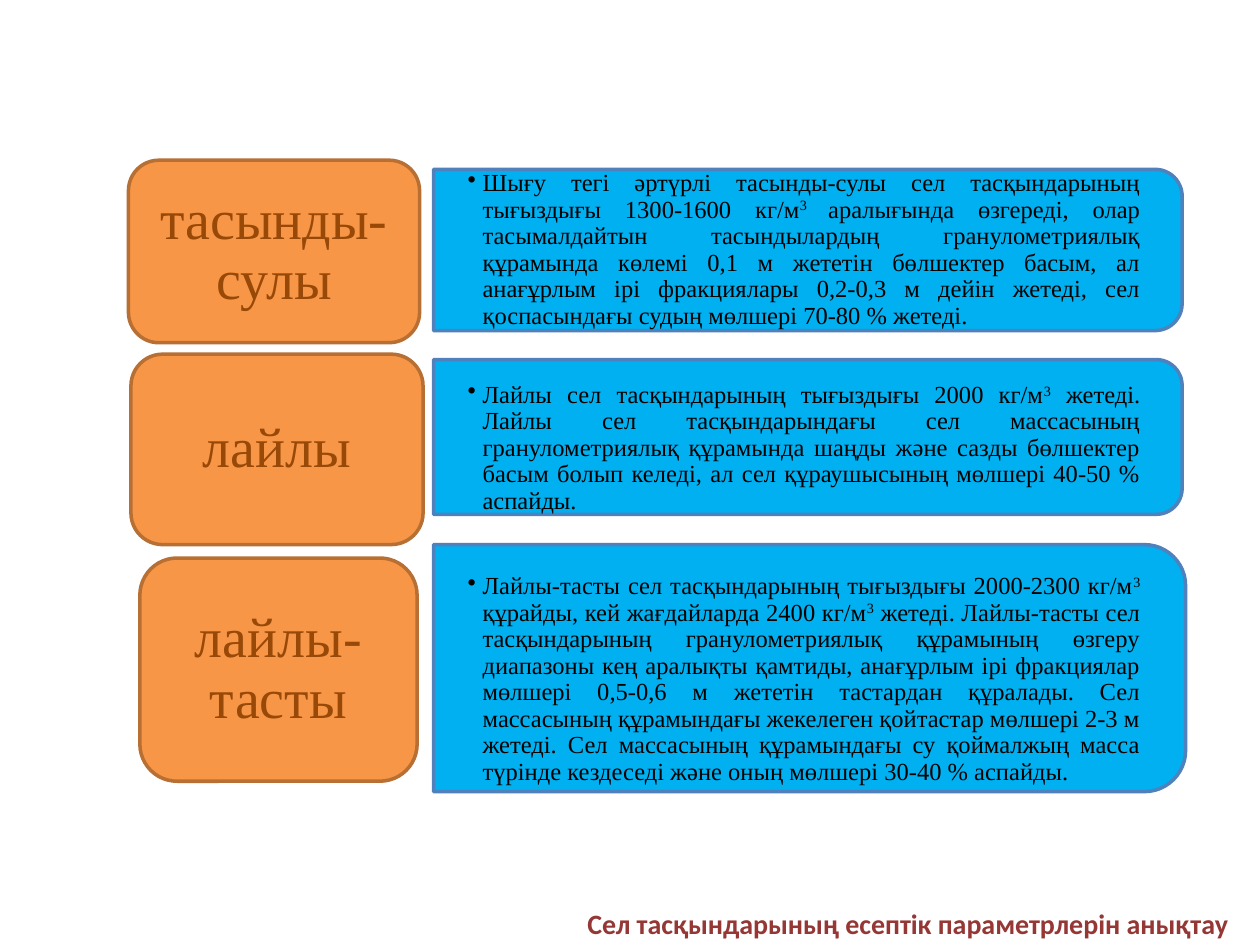
from lxml.etree import SubElement
from pptx import Presentation
from pptx.dml.color import RGBColor
from pptx.enum.shapes import MSO_SHAPE as Preset
from pptx.enum.text import MSO_ANCHOR as Anchor, PP_ALIGN as Align
from pptx.oxml.ns import qn
from pptx.util import Cm, Pt

TITLE = "Сел тасқындарының есептік параметрлерін анықтау"
TITLE_AREA = (11.1, 18.14, 13.67, 0.94)

FLOWS = [
    {
        "name": "тасынды-сулы",
        "label": (2.59, 3.23, 5.87, 3.68),
        "panel": (5.04, 15.09, 3.25),
        "drop": 0,
        "detail": "Шығу тегі әртүрлі тасынды-сулы сел тасқындарының тығыздығы "
                  "1300-1600 кг/м|3 |аралығында өзгереді, олар тасымалдайтын "
                  "тасындылардың гранулометриялық құрамында көлемі 0,1 м жететін "
                  "бөлшектер басым, ал анағұрлым ірі фракциялары 0,2-0,3 м дейін "
                  "жетеді, сел қоспасындағы судың мөлшері 70-80 % жетеді.",
    },
    {
        "name": "лайлы",
        "label": (2.64, 7.14, 5.89, 3.84),
        "panel": (8.81, 15.09, 3.12),
        "drop": 0.23,
        "detail": "Лайлы сел тасқындарының тығыздығы 2000 кг/м|3| жетеді. Лайлы сел "
                  "тасқындарындағы сел массасының гранулометриялық құрамында шаңды "
                  "және сазды бөлшектер басым болып келеді, ал сел құраушысының "
                  "мөлшері 40-50 % аспайды.",
    },
    {
        "name": "лайлы-тасты",
        "label": (2.82, 11.25, 5.59, 4.5),
        "panel": (13.47, 15.16, 4.98),
        "drop": 0.23,
        "detail": "Лайлы-тасты сел тасқындарының тығыздығы 2000-2300 кг/м|3| құрайды, "
                  "кей жағдайларда 2400 кг/м|3| жетеді. Лайлы-тасты сел тасқындарының "
                  "гранулометриялық құрамының өзгеру диапазоны кең аралықты қамтиды, "
                  "анағұрлым ірі фракциялар мөлшері 0,5-0,6 м жететін тастардан "
                  "құралады. Сел массасының құрамындағы жекелеген қойтастар мөлшері "
                  "2-3 м жетеді. Сел массасының құрамындағы су қоймалжың масса түрінде "
                  "кездеседі және оның мөлшері 30-40 % аспайды.",
    },
]

THEME = {
    "label": {"fill": "F79646", "line": "B76F34"},
    "panel": {"fill": "00B0F0", "line": "4F81BD"},
    "name_text": {"font": "Times New Roman", "size": 32, "color": "984807"},
    "detail_text": {"font": "Times New Roman", "size": 14, "color": "000000"},
    "title_text": {"font": "Calibri", "size": 16, "color": "953735", "bold": True},
}
PANEL_LEFT, DETAIL_WIDTH = 8.74, 14.94
DETAIL_INSET, LABEL_INSET, BULLET_INDENT = 0.69, 0.33, 0.3


def write(box, text, *, font, size, color, bold=False, align=Align.CENTER,
          spacing=0.9, inset=(0, 0), bullet=False):
    """Fill a shape with one paragraph; every second |-separated part is superscript."""
    frame = box.text_frame
    frame.word_wrap = True
    frame.vertical_anchor = Anchor.MIDDLE
    frame.margin_left = frame.margin_right = Cm(inset[0])
    frame.margin_top = frame.margin_bottom = Cm(inset[1])
    para = frame.paragraphs[0]
    para.alignment = align
    para.line_spacing = spacing
    para.space_before = Pt(0)
    if bullet:
        properties = para._p.get_or_add_pPr()
        properties.set("marL", str(Cm(BULLET_INDENT)))
        properties.set("indent", str(-Cm(BULLET_INDENT)))
        SubElement(properties, qn("a:buChar")).set("char", "•")
    for index, part in enumerate(text.split("|")):
        span = para.add_run()
        span.text = part
        span.font.name = font
        span.font.size = Pt(size)
        span.font.bold = bold
        span.font.color.rgb = RGBColor.from_string(color)
        if index % 2:
            span._r.get_or_add_rPr().set("baseline", "30000")


def add_block(slide, preset, area, *, fill, line):
    """Add a filled, outlined preset shape."""
    block = slide.shapes.add_shape(preset, *map(Cm, area))
    block.shadow.inherit = False
    block.fill.solid()
    block.fill.fore_color.rgb = RGBColor.from_string(fill)
    block.line.color.rgb = RGBColor.from_string(line)
    block.line.width = Pt(2)
    return block


def add_flow(slide, flow):
    """Add the panel, its detail text and the label of one flow type."""
    middle, width, height = flow["panel"]
    area = (PANEL_LEFT + (width - height) / 2, middle - width / 2, height, width)
    panel = add_block(slide, Preset.ROUND_2_SAME_RECTANGLE, area, **THEME["panel"])
    panel.rotation = 90

    top = middle - height / 2 + flow["drop"]
    detail = slide.shapes.add_textbox(*map(Cm, (PANEL_LEFT, top, DETAIL_WIDTH, height)))
    write(detail, flow["detail"], align=Align.JUSTIFY, inset=(DETAIL_INSET, 0),
          bullet=True, **THEME["detail_text"])

    label = add_block(slide, Preset.ROUNDED_RECTANGLE, flow["label"], **THEME["label"])
    write(label, flow["name"], inset=(LABEL_INSET, 0.18), **THEME["name_text"])


def main():
    """Build and save the slide."""
    deck = Presentation()
    deck.slide_width, deck.slide_height = Cm(25.4), Cm(19.05)
    slide = deck.slides.add_slide(deck.slide_layouts[5])
    for flow in FLOWS:
        add_flow(slide, flow)
    title = slide.shapes.title
    title.left, title.top, title.width, title.height = map(Cm, TITLE_AREA)
    write(title, TITLE, align=Align.RIGHT, spacing=1.0, **THEME["title_text"])
    deck.save("out.pptx")


if __name__ == "__main__":
    main()
